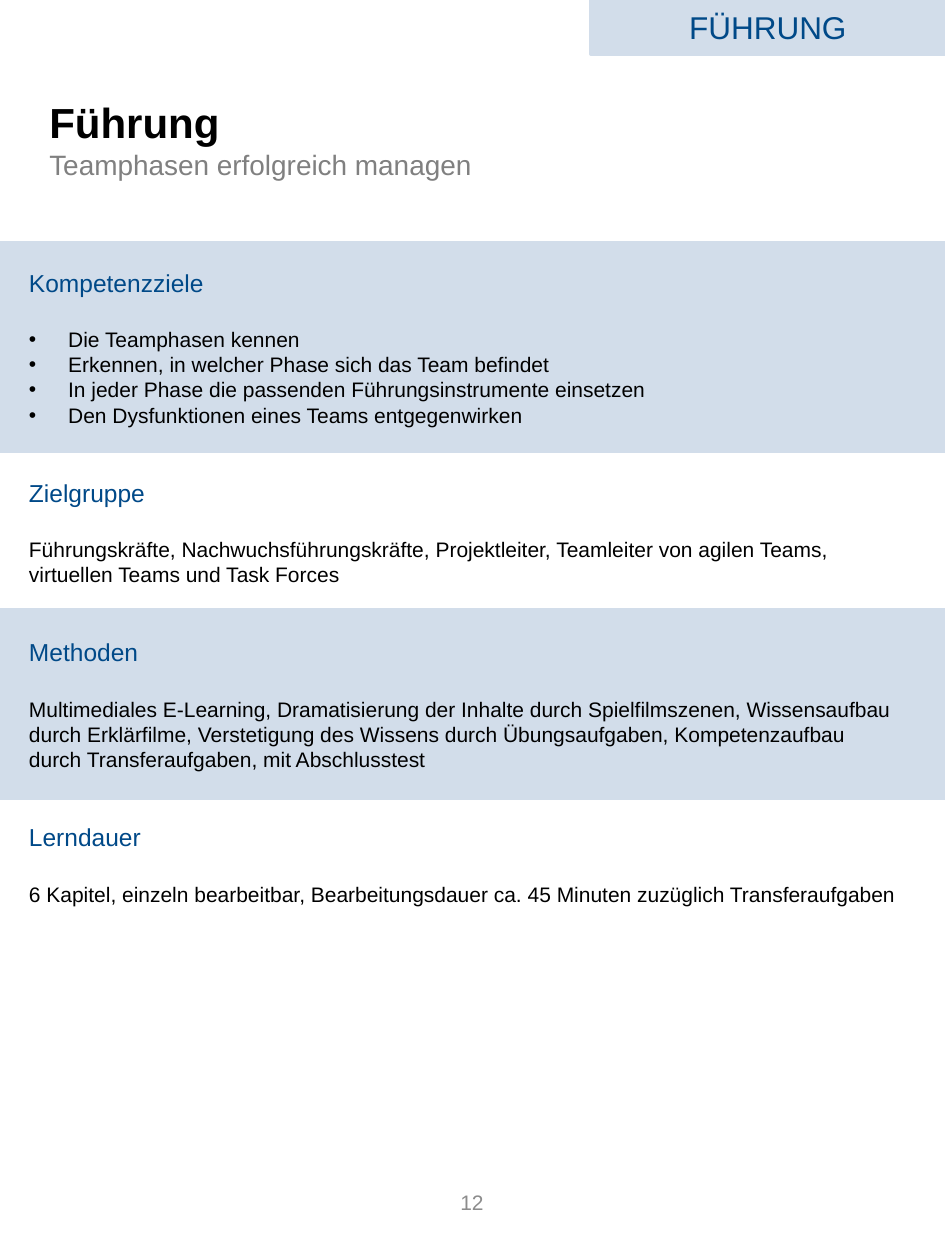
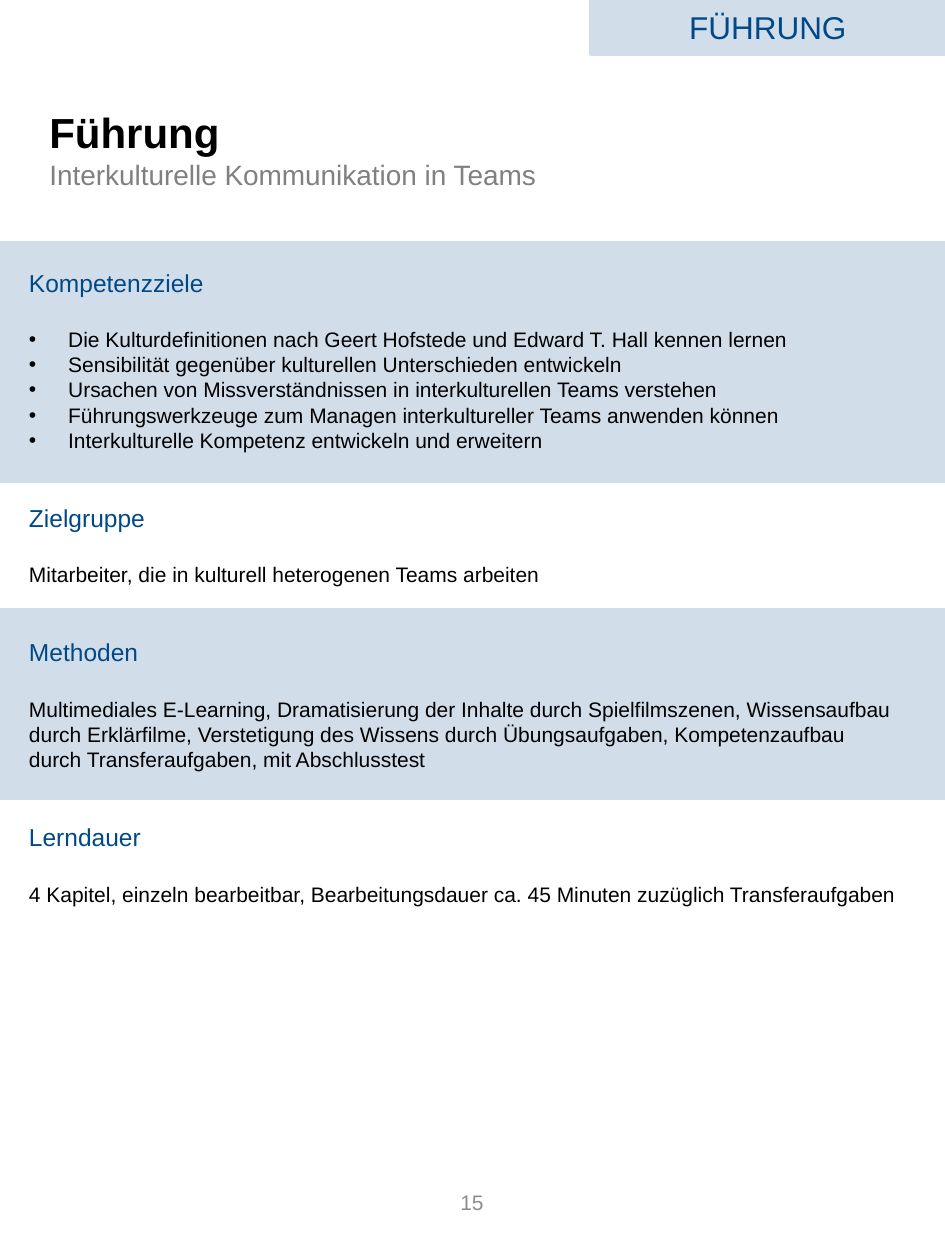
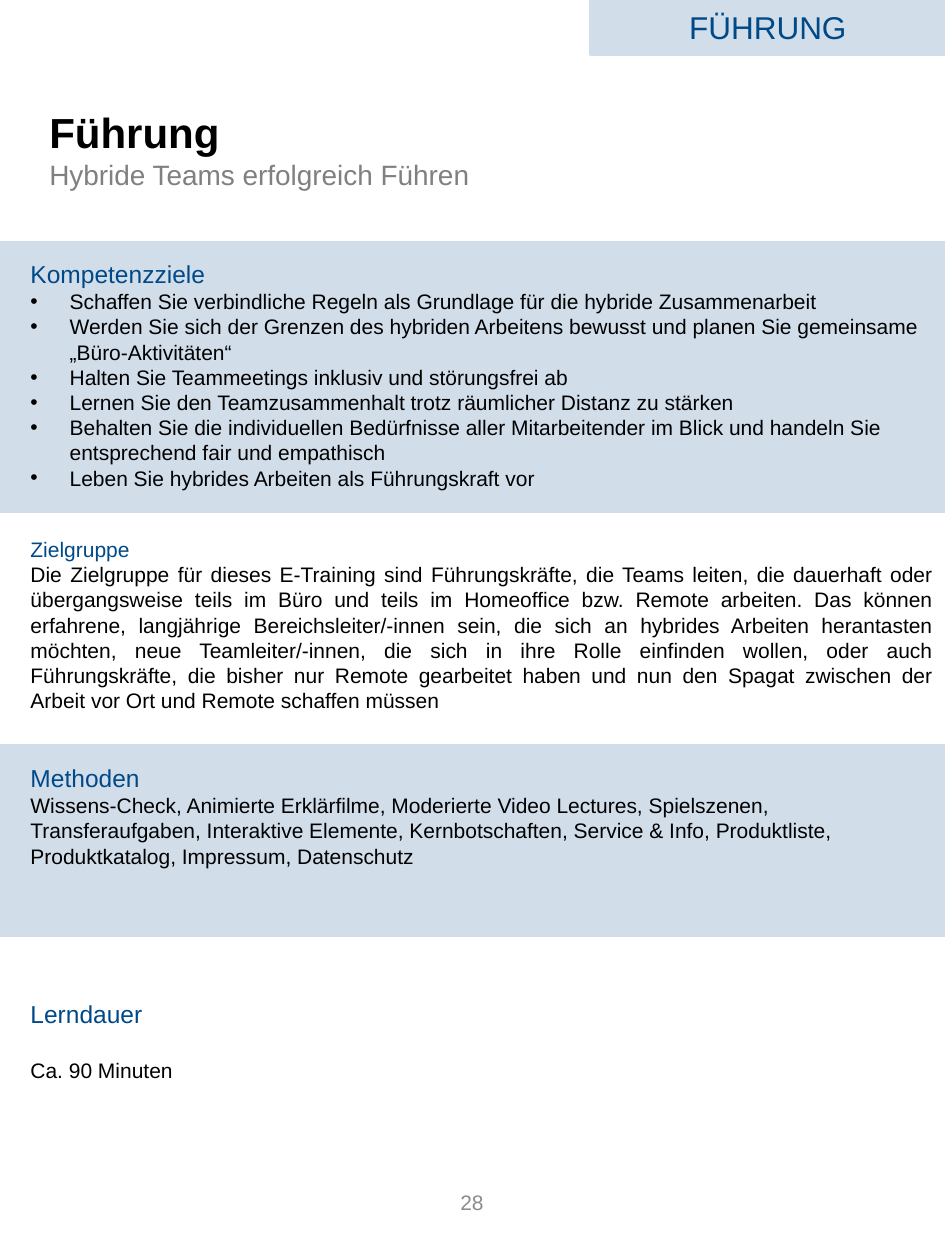
"""Build three course description pages on leadership."""
from lxml.etree import SubElement
from pptx import Presentation
from pptx.dml.color import RGBColor
from pptx.enum.shapes import MSO_SHAPE as Preset
from pptx.enum.text import MSO_ANCHOR as Anchor, MSO_AUTO_SIZE as AutoSize, PP_ALIGN as Align
from pptx.oxml.ns import qn
from pptx.util import Cm, Pt

BLUE = RGBColor(0x00, 0x49, 0x88)
PALE_BLUE = RGBColor(0xD2, 0xDD, 0xEA)
BLACK = RGBColor(0, 0, 0)
GREY = RGBColor(0x80, 0x80, 0x80)
PAGE_GREY = RGBColor(0x8C, 0x8C, 0x8C)

FONT = "Arial"
LEADING = 1.2
BULLET_INDENT = Cm(0.79)
PAGE_WIDTH = 19.05

TITLE = {"size": Pt(24), "bold": True, "color": BLACK}
SUBTITLE = {"size": Pt(16), "bold": False, "color": GREY}
HEADING = {"size": Pt(14), "color": BLUE}
SMALL_HEADING = {"size": Pt(12), "color": BLUE}
BODY = {"size": Pt(12), "color": BLACK}
TAB_LABEL = {"size": Pt(18), "color": BLUE}
PAGE_NUMBER = {"size": Pt(12), "color": PAGE_GREY}

METHODS = (
    "Multimediales E-Learning, Dramatisierung der Inhalte durch Spielfilmszenen, "
    "Wissensaufbau durch Erklärfilme, Verstetigung des Wissens durch Übungsaufgaben, "
    "Kompetenzaufbau durch Transferaufgaben, mit Abschlusstest"
)
DURATION = (
    "{} Kapitel, einzeln bearbeitbar, Bearbeitungsdauer ca. 45 Minuten "
    "zuzüglich Transferaufgaben"
)


def section(heading, content, before=28.8, after=16.8, style=HEADING, align=Align.LEFT):
    """Describe a headed section; a list as content becomes bullets."""
    return {"heading": heading, "content": content, "before": before,
            "after": after, "style": style, "align": align}


def standard_sections(goals, audience, chapters):
    """Return the four sections of a regular course."""
    return [
        section("Kompetenzziele", goals, before=0),
        section("Zielgruppe", audience),
        section("Methoden", METHODS),
        section("Lerndauer", DURATION.format(chapters)),
    ]


STANDARD_BODY = (0.33, 5.27, 18.01, 13.2)
COURSES = [
    {
        "subtitle": "Teamphasen erfolgreich managen",
        "page": "12",
        "title_height": 2.59,
        "bands": [(4.9, 4.19), (12.29, 3.81)],
        "body": STANDARD_BODY,
        "sections": standard_sections(
            [
                "Die Teamphasen kennen",
                "Erkennen, in welcher Phase sich das Team befindet",
                "In jeder Phase die passenden Führungsinstrumente einsetzen",
                "Den Dysfunktionen eines Teams entgegenwirken",
            ],
            "Führungskräfte, Nachwuchsführungskräfte, Projektleiter, Teamleiter von "
            "agilen Teams, virtuellen Teams und Task Forces",
            6,
        ),
    },
    {
        "subtitle": "Interkulturelle Kommunikation in Teams",
        "page": "15",
        "title_height": 3,
        "bands": [(4.9, 4.8), (12.29, 3.81)],
        "body": STANDARD_BODY,
        "sections": standard_sections(
            [
                "Die Kulturdefinitionen nach Geert Hofstede und Edward T. Hall kennen lernen",
                "Sensibilität gegenüber kulturellen Unterschieden entwickeln",
                "Ursachen von Missverständnissen in interkulturellen Teams verstehen",
                "Führungswerkzeuge zum Managen interkultureller Teams anwenden können",
                "Interkulturelle Kompetenz entwickeln und erweitern",
            ],
            "Mitarbeiter, die in kulturell heterogenen Teams arbeiten",
            4,
        ),
    },
    {
        "subtitle": "Hybride Teams erfolgreich Führen",
        "page": "28",
        "title_height": 3,
        "bands": [(4.9, 5.41), (15.04, 3.81)],
        "body": (0.36, 5.1, 18.72, 17.2),
        "sections": [
            section("Kompetenzziele", [
                "Schaffen Sie verbindliche Regeln als Grundlage für die hybride Zusammenarbeit",
                "Werden Sie sich der Grenzen des hybriden Arbeitens bewusst und planen Sie "
                "gemeinsame „Büro-Aktivitäten“",
                "Halten Sie Teammeetings inklusiv und störungsfrei ab",
                "Lernen Sie den Teamzusammenhalt trotz räumlicher Distanz zu stärken",
                "Behalten Sie die individuellen Bedürfnisse aller Mitarbeitender im Blick und "
                "handeln Sie entsprechend fair und empathisch",
                "Leben Sie hybrides Arbeiten als Führungskraft vor",
            ], before=0, after=0),
            section(
                "Zielgruppe",
                "Die Zielgruppe für dieses E-Training sind Führungskräfte, die Teams leiten, "
                "die dauerhaft oder übergangsweise teils im Büro und teils im Homeoffice bzw. "
                "Remote arbeiten. Das können erfahrene, langjährige Bereichsleiter/-innen sein, "
                "die sich an hybrides Arbeiten herantasten möchten, neue Teamleiter/-innen, die "
                "sich in ihre Rolle einfinden wollen, oder auch Führungskräfte, die bisher nur "
                "Remote gearbeitet haben und nun den Spagat zwischen der Arbeit vor Ort und "
                "Remote schaffen müssen",
                before=26.4, after=0, style=SMALL_HEADING, align=Align.JUSTIFY,
            ),
            section(
                "Methoden",
                "Wissens-Check, Animierte Erklärfilme, Moderierte Video Lectures, Spielszenen, "
                "Transferaufgaben, Interaktive Elemente, Kernbotschaften, Service & Info, "
                "Produktliste, Produktkatalog, Impressum, Datenschutz",
                after=0,
            ),
            section("Lerndauer", "Ca. 90 Minuten", before=74.4),
        ],
    },
]


def set_bullet(paragraph, bulleted):
    """Give a paragraph a hanging bullet or take the inherited one away."""
    properties = paragraph._p.get_or_add_pPr()
    indent = BULLET_INDENT if bulleted else 0
    properties.set("marL", str(indent))
    properties.set("indent", str(-indent))
    if bulleted:
        SubElement(properties, qn("a:buFont")).set("typeface", FONT)
        SubElement(properties, qn("a:buChar")).set("char", "•")
    else:
        SubElement(properties, qn("a:buNone"))


def add_text(frame, text, style, before=0, align=Align.LEFT, bulleted=False):
    """Write one formatted paragraph, using the empty first one if it is free."""
    first = frame.paragraphs[0]
    paragraph = frame.add_paragraph() if first.runs else first
    set_bullet(paragraph, bulleted)
    layout = {"alignment": align, "space_before": Pt(before), "space_after": Pt(0),
              "line_spacing": Pt(style["size"].pt * LEADING)}
    for name, value in layout.items():
        setattr(paragraph, name, value)
    run = paragraph.add_run()
    run.text = text
    run.font.name = FONT
    for name, value in style.items():
        if name == "color":
            run.font.color.rgb = value
        else:
            setattr(run.font, name, value)


def prepare_frame(shape, anchor):
    """Return the wrapped, fixed-size text frame of a shape."""
    frame = shape.text_frame
    settings = {"word_wrap": True, "auto_size": AutoSize.NONE, "vertical_anchor": anchor}
    for name, value in settings.items():
        setattr(frame, name, value)
    return frame


def place(placeholder, left, top, width, height):
    """Move a placeholder in front of all other shapes and set its bounds."""
    bounds = {"left": left, "top": top, "width": width, "height": height}
    for name, value in bounds.items():
        setattr(placeholder, name, Cm(value))
    placeholder.element.getparent().append(placeholder.element)


def add_band(slide, left, top, width, height):
    """Add a pale blue rectangle."""
    band = slide.shapes.add_shape(Preset.RECTANGLE, Cm(left), Cm(top), Cm(width), Cm(height))
    band.shadow.inherit = False
    band.fill.solid()
    band.fill.fore_color.rgb = PALE_BLUE
    band.line.color.rgb = PALE_BLUE
    band.line.width = Pt(2)
    return band


def add_category_tab(slide):
    """Add the category label in the top right corner."""
    tab = add_band(slide, 11.91, 0, 7.14, 1.09)
    add_text(prepare_frame(tab, Anchor.MIDDLE), "FÜHRUNG", TAB_LABEL, align=Align.CENTER)


def add_page_number(slide, number):
    """Add the page number at the foot of the page."""
    box = slide.shapes.add_textbox(Cm(7.29), Cm(23.55), Cm(4.45), Cm(1.35))
    add_text(prepare_frame(box, Anchor.MIDDLE), number, PAGE_NUMBER, align=Align.CENTER)


def fill_title(slide, subtitle, height):
    """Fill the title placeholder with title and subtitle."""
    title = slide.shapes.title
    place(title, 0.74, 1.5, 17.42, height)
    frame = prepare_frame(title, Anchor.MIDDLE)
    add_text(frame, "Führung", TITLE)
    add_text(frame, subtitle, SUBTITLE)


def fill_body(slide, bounds, sections):
    """Fill the body placeholder with headed sections."""
    body = slide.placeholders[1]
    place(body, *bounds)
    frame = prepare_frame(body, Anchor.TOP)
    for part in sections:
        add_text(frame, part["heading"], part["style"], part["before"])
        content = part["content"]
        bulleted = isinstance(content, list)
        for index, text in enumerate(content if bulleted else [content]):
            before = 0 if index else part["after"]
            add_text(frame, text, BODY, before, part["align"], bulleted)


def add_course(presentation, course):
    """Add one course page."""
    slide = presentation.slides.add_slide(presentation.slide_layouts[1])
    for top, height in course["bands"]:
        add_band(slide, 0, top, PAGE_WIDTH, height)
    add_page_number(slide, course["page"])
    fill_title(slide, course["subtitle"], course["title_height"])
    fill_body(slide, course["body"], course["sections"])
    add_category_tab(slide)


def main():
    """Build and save the presentation."""
    presentation = Presentation()
    presentation.slide_width = Cm(PAGE_WIDTH)
    presentation.slide_height = Cm(25.4)
    for course in COURSES:
        add_course(presentation, course)
    presentation.save("out.pptx")


if __name__ == "__main__":
    main()
